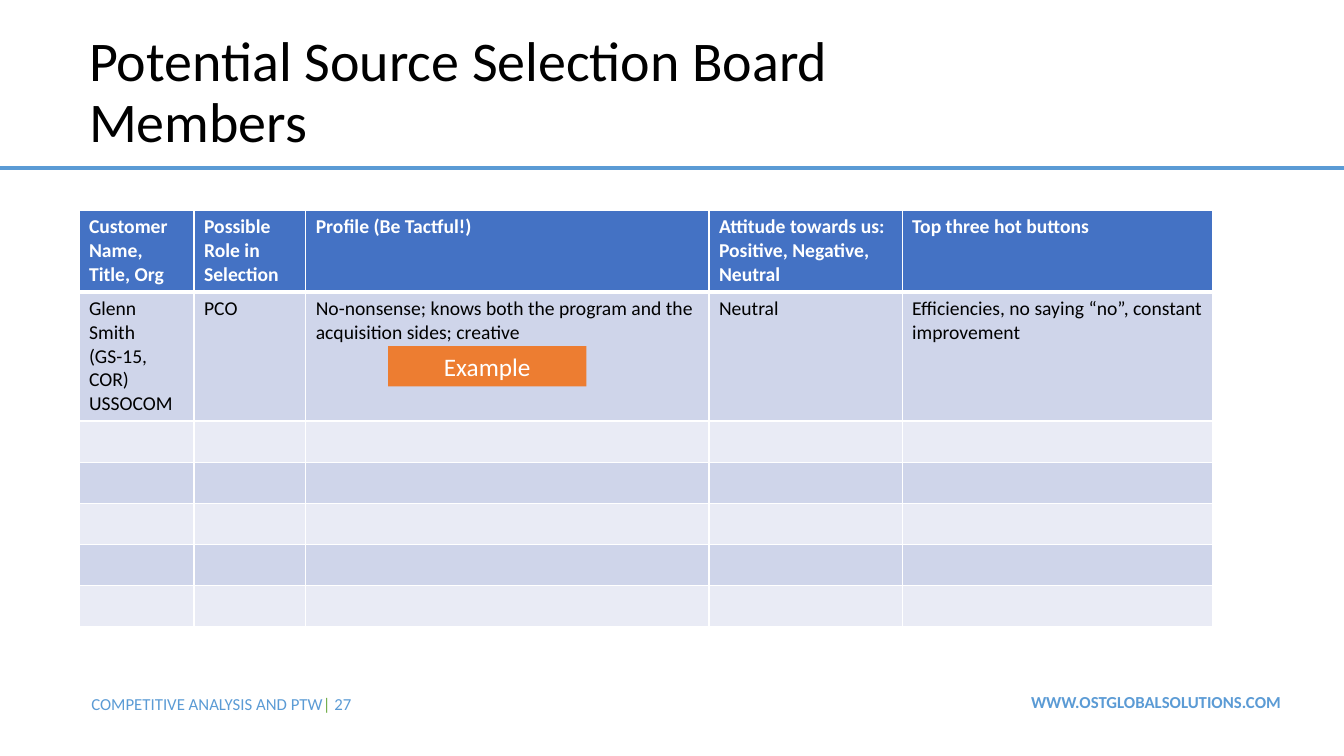
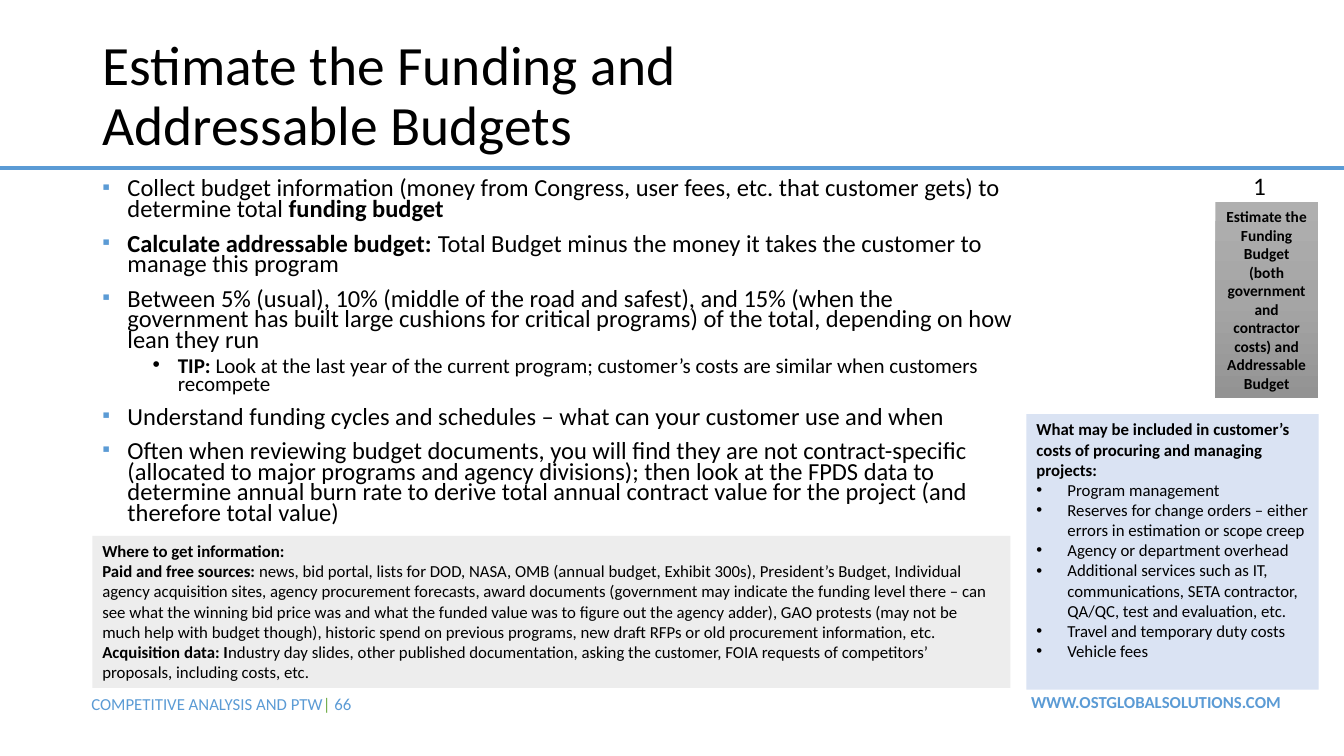
from copy import deepcopy
from dataclasses import dataclass
from typing import Any, NamedTuple

from lxml import etree
from pptx import Presentation
from pptx.dml.color import RGBColor
from pptx.enum.shapes import MSO_CONNECTOR, MSO_SHAPE
from pptx.enum.text import MSO_ANCHOR, MSO_AUTO_SIZE, PP_ALIGN
from pptx.oxml.ns import qn
from pptx.util import Emu, Inches, Pt

LEFT, CENTER, RIGHT = PP_ALIGN.LEFT, PP_ALIGN.CENTER, PP_ALIGN.RIGHT
TOP, MIDDLE = MSO_ANCHOR.TOP, MSO_ANCHOR.MIDDLE
RECTANGLE, STRAIGHT = MSO_SHAPE.RECTANGLE, MSO_CONNECTOR.STRAIGHT
NO_AUTOFIT = MSO_AUTO_SIZE.NONE

# Colours and font
BLACK = RGBColor(0x00, 0x00, 0x00)
WHITE = RGBColor(0xFF, 0xFF, 0xFF)
ACCENT_BLUE = RGBColor(0x5B, 0x9B, 0xD5)
GREEN = RGBColor(0x70, 0xAD, 0x47)
ORANGE = RGBColor(0xED, 0x7D, 0x31)
HEADER_BLUE = RGBColor(0x44, 0x72, 0xC4)
BAND_COLORS = (RGBColor(0xCF, 0xD5, 0xEA), RGBColor(0xE9, 0xEB, 0xF5))
PALE_BLUE = RGBColor(0xDA, 0xE3, 0xF3)
PALE_GRAY = RGBColor(0xED, 0xED, 0xED)
STEP_GRAYS = (RGBColor(0xAF, 0xAF, 0xAF), RGBColor(0xA5, 0xA5, 0xA5),
              RGBColor(0x93, 0x93, 0x93))
FONT = "Calibri"

# The slide is a grid of square cells
SLIDE_WIDTH, SLIDE_HEIGHT = Inches(13.3333), Inches(7.5)
GRID_COLUMNS, GRID_ROWS = 16, 9
CELL = SLIDE_HEIGHT / GRID_ROWS
RULE_ROW = 2


def grid(cells: float) -> Emu:
    return Emu(round(cells * CELL))


class Area(NamedTuple):
    """A place in grid columns and rows."""
    left: float
    top: float
    width: float
    height: float

    def lengths(self) -> tuple[Emu, ...]:
        return tuple(grid(value) for value in self)


class Span(NamedTuple):
    text: str
    bold: bool = False
    color: RGBColor = BLACK


@dataclass(frozen=True)
class Style:
    size: float
    align: Any = LEFT
    line_spacing: float = 1.0
    before: float = 0
    bullet: str = ""
    bullet_color: RGBColor | None = None
    bullet_percent: int = 100
    margin: float = 0
    hanging: float = 0


class Para(NamedTuple):
    style: Style
    spans: tuple[Span, ...]


TITLE = Style(40, line_spacing=0.9)
SMALL_TITLE = Style(39.6, line_spacing=0.9)
FOOTER = Style(12)
FOOTER_RIGHT = Style(12, align=RIGHT)
TABLE_TEXT = Style(14)
LABEL = Style(18)
LABEL_CENTERED = Style(18, align=CENTER)
STEP = Style(11, align=CENTER)
POINT = Style(17.5, line_spacing=0.7, before=10, bullet="▪", bullet_color=ACCENT_BLUE,
              bullet_percent=90, margin=0.3, hanging=0.3)
TIP = Style(15, line_spacing=0.7, before=5, bullet="•", margin=0.9, hanging=0.3)
NOTE = Style(12)
NOTE_POINT = Style(12, bullet="•", margin=0.37, hanging=0.37)


def apply(target: Any, values: dict[str, Any]) -> None:
    for name, value in values.items():
        setattr(target, name, value)


def line(style: Style, text: str, bold: bool = False, color: RGBColor = BLACK) -> Para:
    return Para(style, (Span(text, bold, color),))


# Text
def add_bullet(para: Any, style: Style) -> None:
    properties = para._p.get_or_add_pPr()
    properties.set("marL", str(grid(style.margin)))
    properties.set("indent", str(-grid(style.hanging)))
    if style.bullet_color is not None:
        color = etree.SubElement(properties, qn("a:buClr"))
        etree.SubElement(color, qn("a:srgbClr"), val=str(style.bullet_color))
    etree.SubElement(properties, qn("a:buSzPct"), val=str(style.bullet_percent * 1000))
    etree.SubElement(properties, qn("a:buFont"), typeface="Arial")
    etree.SubElement(properties, qn("a:buChar"), char=style.bullet)


def write(frame: Any, paras: list[Para], anchor: Any = TOP) -> None:
    apply(frame, {"word_wrap": True, "auto_size": NO_AUTOFIT, "vertical_anchor": anchor})
    fill_paragraphs(frame, paras)


def fill_paragraphs(frame: Any, paras: list[Para]) -> None:
    for index, (style, spans) in enumerate(paras):
        para = frame.add_paragraph() if index else frame.paragraphs[0]
        if style.bullet:
            add_bullet(para, style)
        apply(para, {"alignment": style.align, "line_spacing": style.line_spacing,
                     "space_before": Pt(style.before if index else 0),
                     "space_after": Pt(0)})
        for span in spans:
            run = para.add_run()
            run.text = span.text
            apply(run.font, {"name": FONT, "size": Pt(style.size), "bold": span.bold})
            run.font.color.rgb = span.color


def add_text(page: Any, area: Area, paras: list[Para]) -> None:
    write(page.shapes.add_textbox(*area.lengths()).text_frame, paras)


def add_panel(page: Any, area: Area, paras: list[Para], fill: RGBColor | None = None,
              anchor: Any = TOP) -> Any:
    box = page.shapes.add_shape(RECTANGLE, *area.lengths())
    box.shadow.inherit = False
    box.line.fill.background()
    if fill is not None:
        box.fill.solid()
        box.fill.fore_color.rgb = fill
    write(box.text_frame, paras, anchor)
    return box


def shade_downward(box: Any, colors: tuple[RGBColor, ...]) -> None:
    box.fill.gradient()
    box.fill.gradient_angle = 270
    stop_list = box._element.spPr.find(".//" + qn("a:gsLst"))
    stop_list.insert(1, deepcopy(stop_list[0]))
    for index, (stop, color) in enumerate(zip(box.fill.gradient_stops, colors)):
        stop.position = index / (len(colors) - 1)
        stop.color.rgb = color


# Shared page parts
def add_page(deck: Any, title: Para, title_area: Area, number: int) -> Any:
    page = deck.slides.add_slide(deck.slide_layouts.get_by_name("Title Only"))
    rule = page.shapes.add_connector(STRAIGHT, 0, grid(RULE_ROW),
                                     SLIDE_WIDTH, grid(RULE_ROW))
    rule.line.color.rgb = ACCENT_BLUE
    rule.line.width = Pt(3)
    etree.SubElement(rule._element.spPr, qn("a:effectLst"))
    add_text(page, Area(11.27, 8.18, 4.1, 0.36),
             [line(FOOTER_RIGHT, "WWW.OSTGLOBALSOLUTIONS.COM", True, ACCENT_BLUE)])
    add_text(page, Area(0.97, 8.2, 5.78, 0.36), [Para(FOOTER, (
        Span("COMPETITIVE ANALYSIS AND PTW", color=ACCENT_BLUE),
        Span("| ", color=GREEN),
        Span(str(number), color=ACCENT_BLUE)))])
    heading = page.shapes.title
    apply(heading, dict(zip(("left", "top", "width", "height"), title_area.lengths())))
    write(heading.text_frame, [title], MIDDLE)
    return page


# Table
def set_borders(cell: Any, bottom: float) -> None:
    properties = cell._tc.get_or_add_tcPr()
    for side, width in {"L": 1, "R": 1, "T": 1, "B": bottom}.items():
        border = etree.SubElement(properties, qn(f"a:ln{side}"), w=str(Pt(width)))
        fill = etree.SubElement(border, qn("a:solidFill"))
        etree.SubElement(fill, qn("a:srgbClr"), val=str(WHITE))


def add_board_table(page: Any) -> None:
    widths = (1.37, 1.33, 4.8, 2.3, 3.7)
    heights = (0.97, 1.54) + (0.49,) * 5
    texts = (
        ("Customer Name, Title, Org", "Possible Role in Selection",
         "Profile (Be Tactful!)", "Attitude towards us: Positive, Negative, Neutral",
         "Top three hot buttons"),
        ("Glenn Smith (GS-15, COR) USSOCOM", "PCO",
         "No-nonsense; knows both the program and the acquisition sides; creative",
         "Neutral", "Efficiencies, no saying “no”, constant improvement"),
    )
    area = Area(0.94, 2.5, sum(widths), sum(heights))
    table = page.shapes.add_table(len(heights), len(widths), *area.lengths()).table
    for column, width in zip(table.columns, widths):
        column.width = grid(width)
    for row_index, (row, height) in enumerate(zip(table.rows, heights)):
        row.height = grid(height)
        header = row_index == 0
        for column_index, cell in enumerate(row.cells):
            set_borders(cell, bottom=3 if header else 1)
            cell.fill.solid()
            cell.fill.fore_color.rgb = (
                HEADER_BLUE if header else BAND_COLORS[(row_index - 1) % 2])
            if row_index < len(texts):
                fill_paragraphs(cell.text_frame, [
                    line(TABLE_TEXT, texts[row_index][column_index], header,
                         WHITE if header else BLACK)])


# Slides
def build_board_members(deck: Any) -> None:
    page = add_page(deck, line(TITLE, "Potential Source Selection Board Members"),
                    Area(0.94, 0.25, 11.04, 1.74), 27)
    add_board_table(page)
    add_panel(page, Area(4.62, 4.12, 2.36, 0.48),
              [line(LABEL_CENTERED, "Example", color=WHITE)], ORANGE)


def build_budgets(deck: Any) -> None:
    page = add_page(deck, line(SMALL_TITLE, "Estimate the Funding and Addressable Budgets"),
                    Area(1.1, 0.48, 10.3, 1.37), 66)
    add_text(page, Area(1.1, 2.09, 11.11, 4.4), [
        Para(POINT, (
            Span("Collect budget information (money from Congress, user fees, etc. that "
                 "customer gets) to determine total "),
            Span("funding budget", True))),
        Para(POINT, (
            Span("Calculate addressable budget: ", True),
            Span("Total Budget minus the money it takes the customer to manage this "
                 "program"))),
        line(POINT, "Between 5% (usual), 10% (middle of the road and safest), and 15% (when "
                    "the government has built large cushions for critical programs) of the "
                    "total, depending on how lean they run"),
        Para(TIP, (
            Span("TIP: ", True),
            Span("Look at the last year of the current program; customer’s costs are "
                 "similar when customers recompete"))),
        line(POINT, "Understand funding cycles and schedules – what can your customer use "
                    "and when"),
        line(POINT, "Often when reviewing budget documents, you will find they are not "
                    "contract-specific (allocated to major programs and agency divisions); "
                    "then look at the FPDS data to determine annual burn rate to derive "
                    "total annual contract value for the project (and therefore total "
                    "value)"),
    ])
    included_costs = (
        "Program management",
        "Reserves for change orders – either errors in estimation or scope creep",
        "Agency or department overhead",
        "Additional services such as IT, communications, SETA contractor, QA/QC, test and "
        "evaluation, etc.",
        "Travel and temporary duty costs",
        "Vehicle fees",
    )
    add_panel(page, Area(12.22, 4.93, 3.48, 3.28), [
        line(NOTE, "What may be included in customer’s costs of procuring and managing "
                   "projects:", True),
        *(line(NOTE_POINT, cost) for cost in included_costs),
    ], PALE_BLUE)
    add_panel(page, Area(1.1, 6.38, 10.93, 1.81), [
        line(NOTE, "Where to get information:", True),
        Para(NOTE, (
            Span("Paid and free sources: ", True),
            Span("news, bid portal, lists for DOD, NASA, OMB (annual budget, Exhibit 300s), "
                 "President’s Budget, Individual agency acquisition sites, agency "
                 "procurement forecasts, award documents (government may indicate the "
                 "funding level there – can see what the winning bid price was and what the "
                 "funded value was to figure out the agency adder), GAO protests (may not "
                 "be much help with budget though), historic spend on previous programs, "
                 "new draft RFPs or old procurement information, etc."))),
        Para(NOTE, (
            Span("Acquisition data: I", True),
            Span("ndustry day slides, other published documentation, asking the customer, "
                 "FOIA requests of competitors’ proposals, including costs, etc."))),
    ], PALE_GRAY)
    step = add_panel(page, Area(14.47, 2.4, 1.22, 2.34), [
        line(STEP, "Estimate the Funding Budget (both government and contractor costs) and "
                   "Addressable Budget", True)], anchor=MIDDLE)
    shade_downward(step, STEP_GRAYS)
    add_text(page, Area(14.8, 1.97, 1.02, 0.48), [line(LABEL, "1")])


def main() -> None:
    deck = Presentation()
    apply(deck, {"slide_width": SLIDE_WIDTH, "slide_height": SLIDE_HEIGHT})
    build_board_members(deck)
    build_budgets(deck)
    deck.save("out.pptx")


if __name__ == "__main__":
    main()
